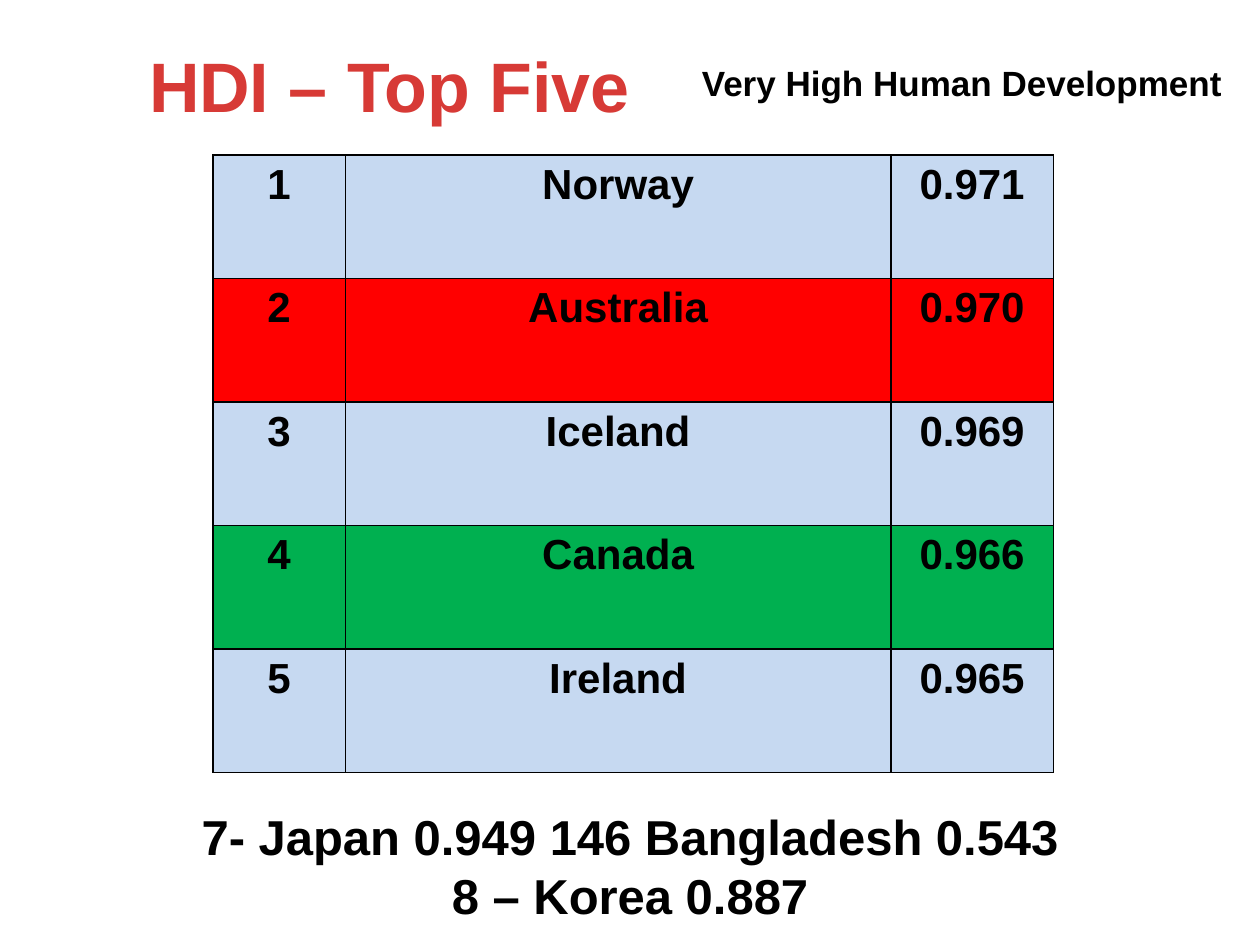
from dataclasses import dataclass

from lxml.etree import SubElement
from pptx import Presentation
from pptx.dml.color import RGBColor
from pptx.enum.text import MSO_ANCHOR, MSO_AUTO_SIZE, PP_ALIGN
from pptx.oxml.ns import qn
from pptx.util import Inches, Pt

WIDTH, HEIGHT = Inches(10), Inches(7.5)
FONT = "Arial"
BLACK = RGBColor(0x00, 0x00, 0x00)
TITLE_RED = RGBColor(0xD7, 0x3A, 0x36)
PALE_BLUE = RGBColor(0xC6, 0xD9, 0xF1)
RED = RGBColor(0xFF, 0x00, 0x00)
GREEN = RGBColor(0x00, 0xB0, 0x50)
COLUMN_WIDTHS = (1.05, 4.33, 1.29)
ROW_HEIGHT = 0.98


@dataclass(frozen=True)
class Country:
    rank: int
    name: str
    index: str
    fill: RGBColor = PALE_BLUE


@dataclass(frozen=True)
class Area:
    left: float
    top: float
    width: float
    height: float

    def lengths(self) -> tuple:
        return tuple(Inches(n) for n in (self.left, self.top, self.width, self.height))


TOP_FIVE = (
    Country(1, "Norway", "0.971"),
    Country(2, "Australia", "0.970", RED),
    Country(3, "Iceland", "0.969"),
    Country(4, "Canada", "0.966", GREEN),
    Country(5, "Ireland", "0.965"),
)


def write_lines(frame, lines: tuple, size: int, color: RGBColor = BLACK) -> None:
    """Write centred bold lines, one paragraph each."""
    for number, line in enumerate(lines):
        paragraph = frame.add_paragraph() if number else frame.paragraphs[0]
        paragraph.alignment = PP_ALIGN.CENTER
        run = paragraph.add_run()
        run.text = line
        run.font.name, run.font.size, run.font.bold = FONT, Pt(size), True
        run.font.color.rgb = color


def add_note(slide, area: Area, lines: tuple, size: int) -> None:
    """Add a wrapped text box."""
    frame = slide.shapes.add_textbox(*area.lengths()).text_frame
    frame.word_wrap = True
    write_lines(frame, lines, size)


def set_title(slide, area: Area, text: str) -> None:
    """Place and format the title placeholder."""
    title = slide.shapes.title
    title.left, title.top, title.width, title.height = area.lengths()
    title.text_frame.auto_size = MSO_AUTO_SIZE.NONE
    title.text_frame.vertical_anchor = MSO_ANCHOR.TOP
    write_lines(title.text_frame, (text,), 40, TITLE_RED)


def draw_borders(cell) -> None:
    """Give a cell thin black borders, placed ahead of its fill."""
    properties = cell._tc.get_or_add_tcPr()
    for position, side in enumerate(("a:lnL", "a:lnR", "a:lnT", "a:lnB")):
        line = SubElement(properties, qn(side), w=str(Pt(1)))
        fill = SubElement(line, qn("a:solidFill"))
        SubElement(fill, qn("a:srgbClr"), val=str(BLACK))
        properties.insert(position, line)


def add_ranking(slide, left: float, top: float, countries: tuple) -> None:
    """Add the table of countries, one row each."""
    area = Area(left, top, sum(COLUMN_WIDTHS), ROW_HEIGHT * len(countries))
    table = slide.shapes.add_table(
        len(countries), len(COLUMN_WIDTHS), *area.lengths()
    ).table
    table.first_row = table.horz_banding = False
    for column, width in zip(table.columns, COLUMN_WIDTHS):
        column.width = Inches(width)
    for row, country in zip(table.rows, countries):
        row.height = Inches(ROW_HEIGHT)
        values = (str(country.rank), country.name, country.index)
        for cell, value in zip(row.cells, values):
            cell.fill.solid()
            cell.fill.fore_color.rgb = country.fill
            draw_borders(cell)
            write_lines(cell.text_frame, (value,), 24)


def main() -> None:
    """Build the slide and save it."""
    deck = Presentation()
    deck.slide_width, deck.slide_height = WIDTH, HEIGHT
    slide = deck.slides.add_slide(deck.slide_layouts[5])
    set_title(slide, Area(0, 0.29, 6.18, 0.77), "HDI – Top Five")
    add_ranking(slide, 1.69, 1.23, TOP_FIVE)
    others = ("7- Japan 0.949 146 Bangladesh 0.543", "8 – Korea 0.887")
    add_note(slide, Area(0.67, 6.35, 8.66, 1.04), others, 28)
    add_note(slide, Area(5.27, 0.44, 4.73, 0.44), ("Very High Human Development",), 20)
    deck.save("out.pptx")


if __name__ == "__main__":
    main()
